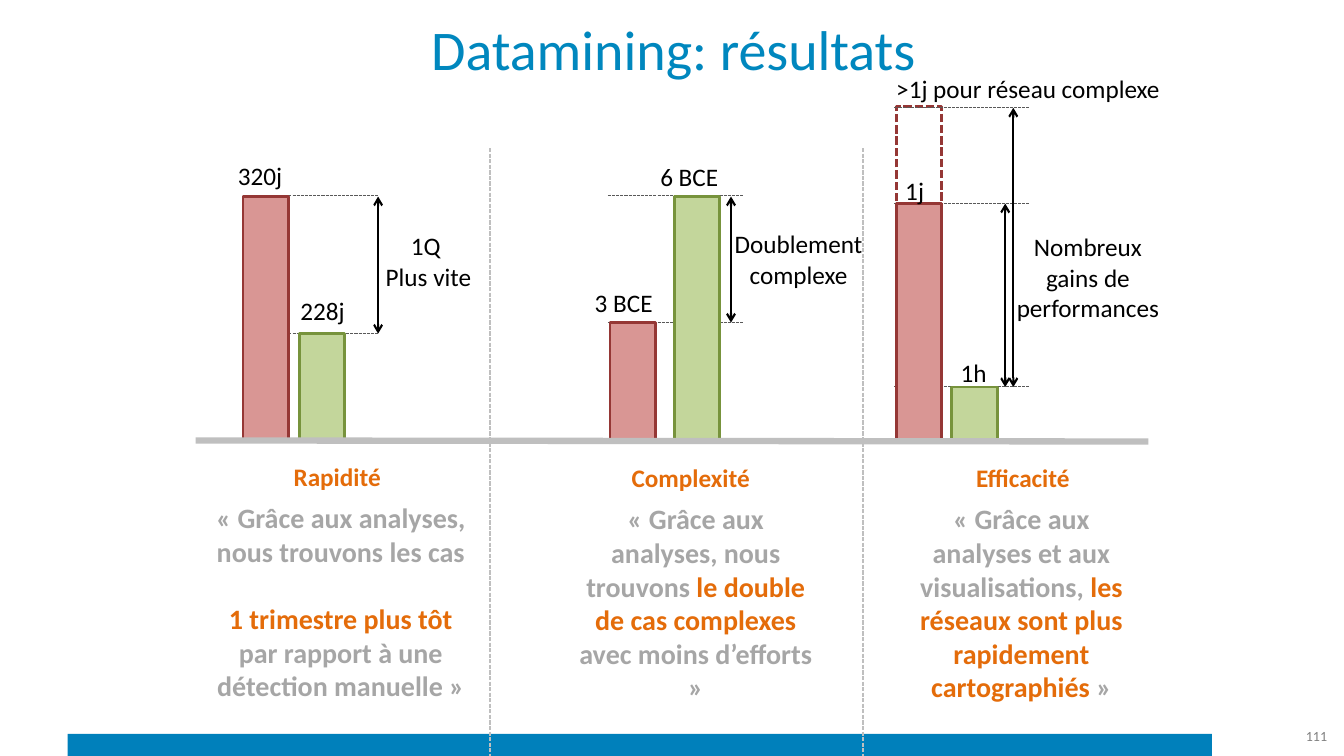
"""Builds the data mining results slide: three before/after bar comparisons."""
from pptx import Presentation
from pptx.dml.color import RGBColor
from pptx.enum.dml import MSO_LINE
from pptx.enum.shapes import MSO_CONNECTOR, MSO_SHAPE
from pptx.enum.text import MSO_ANCHOR, PP_ALIGN
from pptx.oxml.ns import qn
from pptx.util import Inches, Pt
from lxml import etree

STRAIGHT, RECT = MSO_CONNECTOR.STRAIGHT, MSO_SHAPE.RECTANGLE
DASH = MSO_LINE.SQUARE_DOT
LEFT, CENTER, RIGHT = PP_ALIGN.LEFT, PP_ALIGN.CENTER, PP_ALIGN.RIGHT
MIDDLE, TOP = MSO_ANCHOR.MIDDLE, MSO_ANCHOR.TOP

COLORS = {
    "footer": "0080BB", "title": "0087BE", "accent": "E46C0A", "quote": "A6A6A6",
    "text": "000000", "number": "808080", "guide": "595959", "rule": "BFBFBF",
    "before": "D99694", "before_line": "953735",
    "after": "C3D69B", "after_line": "77933C",
}
FONT = "Calibri"
BASE, BAR_W, GUIDE_W = 4.37, 0.45, 1.34
DIVIDERS = (4.86, 8.56)

PANELS = [
    {
        "guides": (2.41, (1.94, 3.31)),
        "bars": [("before", 2.41, 1.95), ("after", 2.97, 3.31)],
        "arrows": [(3.75, 1.95, 3.31)],
        "values": [("320j", (2.26, 1.54, 0.65, 0.4)), ("228j", (2.88, 2.88, 0.65, 0.4))],
        "gain": (["1Q ", "Plus vite"], (3.72, 2.24, 1.06, 0.71)),
        "heading": ("Rapidité", (2.81, 4.53, 1.07, 0.4)),
        "quote": ([[("« Grâce aux analyses, nous trouvons les cas", "quote")],
                   [("1 trimestre plus tôt ", "accent"),
                    ("par rapport à une détection manuelle »", "quote")]],
                  (2.04, 4.92, 2.68, 1.78)),
    },
    {
        "guides": (6.03, (1.94, 3.2)),
        "bars": [("before", 6.05, 3.2), ("after", 6.69, 1.95)],
        "arrows": [(7.25, 1.95, 3.2)],
        "values": [("3 BCE", (5.8, 2.8, 0.78, 0.4)), ("6 BCE", (6.45, 1.55, 0.78, 0.4))],
        "gain": (["Doublement", "complexe"], (7.16, 2.22, 1.52, 0.71)),
        "heading": ("Complexité", (6.16, 4.54, 1.38, 0.4)),
        "quote": ([[("« Grâce aux analyses, nous trouvons ", "quote"),
                    ("le double de cas complexes ", "accent"),
                    ("avec moins d’efforts »", "quote")]],
                  (5.64, 4.93, 2.52, 2.12)),
    },
    {
        "guides": (8.87, (1.07, 2.02, 3.83)),
        "bars": [("before", 8.89, 2.02), ("after", 9.44, 3.84)],
        "arrows": [(9.97, 2.02, 3.84), (10.05, 1.07, 3.84)],
        "values": [("1j", (8.88, 1.69, 0.39, 0.4)), ("1h", (9.43, 3.5, 0.46, 0.4)),
                   (">1j pour réseau complexe", (8.79, 0.68, 2.91, 0.4))],
        "gain": (["Nombreux gains de performances"], (9.95, 2.25, 1.68, 1.01)),
        "heading": ("Efficacité", (9.57, 4.54, 1.15, 0.4)),
        "quote": ([[("« Grâce aux analyses et aux visualisations, ", "quote"),
                    ("les réseaux sont plus rapidement cartographiés", "accent"),
                    (" »", "quote")]],
                  (8.87, 4.93, 2.52, 2.12)),
    },
]


def rgb(name):
    return RGBColor.from_string(COLORS[name])


def add_rect(s, box, fill=None, line=None, dash=None):
    sp = s.shapes.add_shape(RECT, *map(Inches, box))
    sp.shadow.inherit = False
    if fill:
        sp.fill.solid()
        sp.fill.fore_color.rgb = rgb(fill)
    else:
        sp.fill.background()
    if line:
        sp.line.color.rgb = rgb(line)
        sp.line.width = Pt(2)
        sp.line.dash_style = dash
    else:
        sp.line.fill.background()


def add_line(s, ends, color, width, dash=None, arrows=False):
    cx = s.shapes.add_connector(STRAIGHT, *map(Inches, ends))
    cx.line.color.rgb = rgb(color)
    cx.line.width = Pt(width)
    cx.line.dash_style = dash
    if arrows:
        ln = cx.line._get_or_add_ln()
        for tag in ("a:headEnd", "a:tailEnd"):
            etree.SubElement(ln, qn(tag), type="arrow")
    etree.SubElement(cx._element.spPr, qn("a:effectLst"))


def add_text(s, paragraphs, box, size=18, color="text", bold=False,
             align=CENTER, wrap=False, anchor=TOP, gap=0):
    tf = s.shapes.add_textbox(*map(Inches, box)).text_frame
    tf.word_wrap = wrap
    tf.vertical_anchor = anchor
    for i, runs in enumerate(paragraphs):
        p = tf.add_paragraph() if i else tf.paragraphs[0]
        p.alignment = align
        if i and gap:
            p.space_before = Pt(gap)
        p.font.name, p.font.size, p.font.bold = FONT, Pt(size), bold
        p.font.color.rgb = rgb(color)
        if isinstance(runs, str):
            runs = [(runs, color)]
        for text, run_color in runs:
            r = p.add_run()
            r.text = text
            if run_color != color:
                r.font.color.rgb = rgb(run_color)


def add_bars(s, panel):
    x, levels = panel["guides"]
    for y in levels:
        add_line(s, (x, y, x + GUIDE_W, y), "guide", 0.75, DASH)
    for kind, left, top in panel["bars"]:
        add_rect(s, (left, top, BAR_W, BASE - top), kind, kind + "_line")


def add_labels(s, panel):
    for x, top, bottom in panel["arrows"]:
        add_line(s, (x, top, x, bottom), "text", 1.5, arrows=True)
    for text, box in panel["values"]:
        add_text(s, [text], box, align=LEFT)
    add_text(s, *panel["gain"], wrap=True)
    heading, box = panel["heading"]
    add_text(s, [heading], box, color="accent", bold=True)
    add_text(s, *panel["quote"], size=20, color="quote", bold=True, wrap=True, gap=24)


def main():
    prs = Presentation()
    prs.slide_width, prs.slide_height = Inches(13.33), Inches(7.5)
    s = prs.slides.add_slide(prs.slide_layouts[6])
    add_rect(s, (0.67, 7.28, 11.35, 0.25), "footer")
    add_rect(s, (8.89, 1.06, BAR_W, 1.16), line="before_line", dash=DASH)
    for panel in PANELS:
        add_bars(s, panel)
    for x in DIVIDERS:
        add_line(s, (x, 1.47, x, 7.5), "rule", 1, DASH)
    add_line(s, (1.94, 4.37, 11.39, 4.38), "rule", 4.5)
    for panel in PANELS:
        add_labels(s, panel)
    add_text(s, ["Datamining: résultats"], (2.18, -0.03, 9, 1.01), 40, "title",
             wrap=True, anchor=MIDDLE)
    add_text(s, ["111"], (12.17, 7.1, 1.09, 0.4), 10, "number",
             align=RIGHT, wrap=True, anchor=MIDDLE)
    prs.save("out.pptx")


if __name__ == "__main__":
    main()
